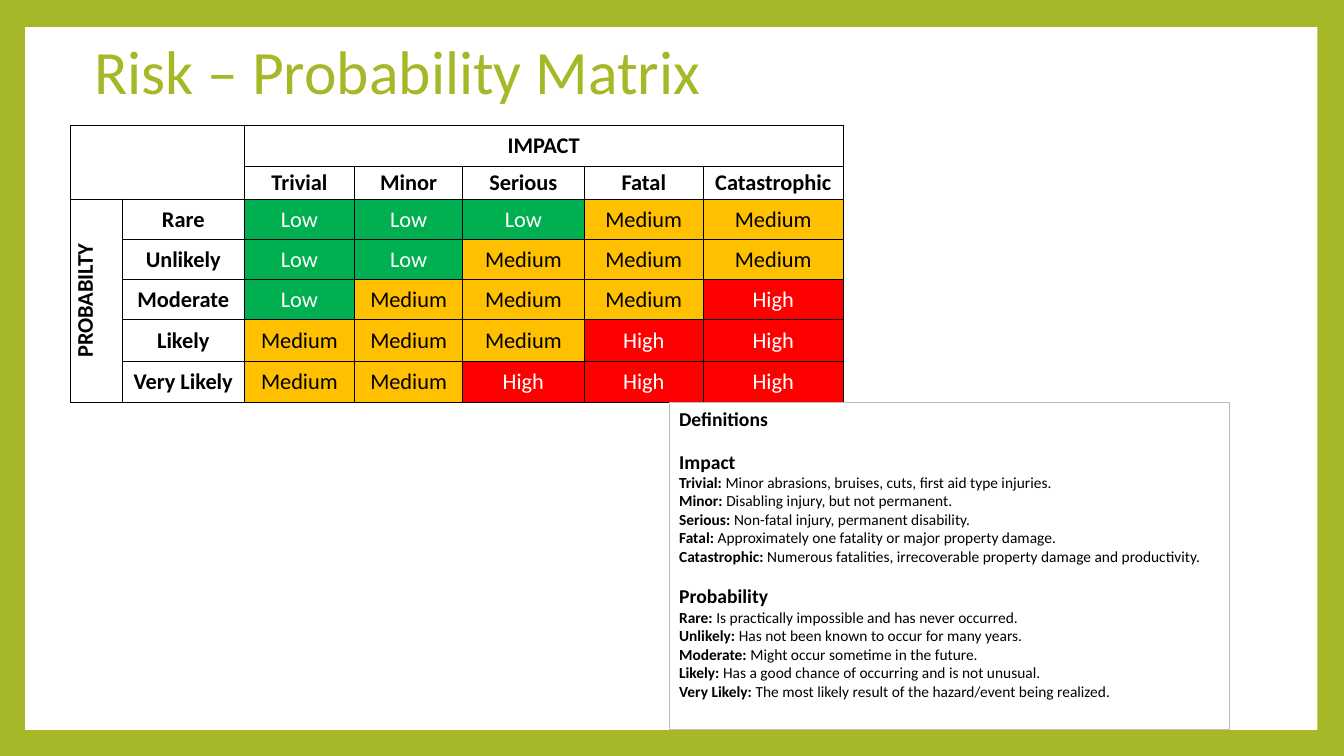
from dataclasses import dataclass

from lxml.etree import SubElement
from pptx import Presentation
from pptx.dml.color import RGBColor
from pptx.enum.shapes import MSO_SHAPE
from pptx.enum.text import MSO_ANCHOR, MSO_AUTO_SIZE, PP_ALIGN
from pptx.oxml.ns import qn
from pptx.shapes.autoshape import Shape
from pptx.slide import Slide
from pptx.table import _Cell
from pptx.text.text import _Paragraph
from pptx.util import Pt

FONT = "Calibri"
LIME = RGBColor(0xA6, 0xB7, 0x27)
WHITE = RGBColor(0xFF, 0xFF, 0xFF)
BLACK = RGBColor(0x00, 0x00, 0x00)
GRAY = RGBColor(0xBD, 0xBD, 0xBD)
GREEN = RGBColor(0x00, 0xB0, 0x50)
AMBER = RGBColor(0xFF, 0xC0, 0x00)
RED = RGBColor(0xFF, 0x00, 0x00)


@dataclass(frozen=True)
class Level:
    name: str
    fill: RGBColor
    color: RGBColor


@dataclass(frozen=True)
class Scale:
    heading: str
    meanings: dict[str, str]


LOW = Level("Low", GREEN, WHITE)
MEDIUM = Level("Medium", AMBER, BLACK)
HIGH = Level("High", RED, WHITE)

IMPACT = Scale("Impact", {
    "Trivial": "Minor abrasions, bruises, cuts, first aid type injuries.",
    "Minor": "Disabling injury, but not permanent.",
    "Serious": "Non-fatal injury, permanent disability.",
    "Fatal": "Approximately one fatality or major property damage.",
    "Catastrophic": "Numerous fatalities, irrecoverable property damage and productivity.",
})
PROBABILITY = Scale("Probability", {
    "Rare": "Is practically impossible and has never occurred.",
    "Unlikely": "Has not been known to occur for many years.",
    "Moderate": "Might occur sometime in the future.",
    "Likely": "Has a good chance of occurring and is not unusual.",
    "Very Likely": "The most likely result of the hazard/event being realized.",
})

COLUMN_WIDTHS = [37, 87, 79, 77, 87, 85, 100]
ROW_HEIGHTS = [29.3, 23.7, 28.6, 28.6, 28.6, 29.9, 29.3]


def risk_level(likelihood: int, severity: int) -> Level:
    """Rate a risk by the sum of its two zero-based ranks."""
    score = likelihood + severity
    if score <= 2:
        return LOW
    return MEDIUM if score <= 5 else HIGH


def set_font(p: _Paragraph, size: float, color: RGBColor, bold: bool = False) -> None:
    p.font.name = FONT
    p.font.size = Pt(size)
    p.font.color.rgb = color
    p.font.bold = bold


def add_panel(s: Slide, left: float, top: float, width: float, height: float) -> Shape:
    sp = s.shapes.add_shape(MSO_SHAPE.RECTANGLE, Pt(left), Pt(top), Pt(width), Pt(height))
    sp.shadow.inherit = False
    sp.fill.solid()
    sp.fill.fore_color.rgb = WHITE
    sp.line.fill.background()
    return sp


def add_title(s: Slide) -> None:
    title = s.shapes.title
    title.left, title.top, title.width, title.height = Pt(60), Pt(0), Pt(778), Pt(106.5)
    tf = title.text_frame
    tf.text = "Risk – Probability Matrix"
    tf.auto_size = MSO_AUTO_SIZE.NONE
    tf.vertical_anchor = MSO_ANCHOR.MIDDLE
    p = tf.paragraphs[0]
    p.alignment = PP_ALIGN.LEFT
    p.line_spacing = 0.9
    set_font(p, 44, LIME)


def add_borders(cell: _Cell) -> None:
    tc_pr = cell._tc.get_or_add_tcPr()
    for side in ("a:lnL", "a:lnR", "a:lnT", "a:lnB"):
        ln = SubElement(tc_pr, qn(side), w=str(Pt(0.5)))
        SubElement(SubElement(ln, qn("a:solidFill")), qn("a:srgbClr"), val=str(BLACK))


def fill_cell(cell: _Cell, text: str, level: Level | None = None) -> None:
    """Write a rating when a level is given, else a bold heading."""
    cell.text = text
    cell.vertical_anchor = MSO_ANCHOR.MIDDLE
    cell.margin_left = cell.margin_right = cell.margin_top = Pt(0.7)
    cell.margin_bottom = Pt(0)
    p = cell.text_frame.paragraphs[0]
    p.alignment = PP_ALIGN.CENTER
    set_font(p, 16, level.color if level else BLACK, bold=level is None)
    add_borders(cell)
    if level:
        cell.fill.solid()
        cell.fill.fore_color.rgb = level.fill
    else:
        cell.fill.background()


def add_matrix(s: Slide) -> None:
    rows, cols = len(ROW_HEIGHTS), len(COLUMN_WIDTHS)
    table = s.shapes.add_table(rows, cols, Pt(50.4), Pt(89.3),
                               Pt(sum(COLUMN_WIDTHS)), Pt(sum(ROW_HEIGHTS))).table
    table.first_row = table.horz_banding = False
    for column, width in zip(table.columns, COLUMN_WIDTHS):
        column.width = Pt(width)
    for row, height in zip(table.rows, ROW_HEIGHTS):
        row.height = Pt(height)

    headings = {(0, 2): "IMPACT", (2, 0): "PROBABILTY"}
    headings |= {(1, c): name for c, name in enumerate(IMPACT.meanings, 2)}
    headings |= {(r, 1): name for r, name in enumerate(PROBABILITY.meanings, 2)}
    for r in range(rows):
        for c in range(cols):
            if r >= 2 and c >= 2:
                level = risk_level(r - 2, c - 2)
                fill_cell(table.cell(r, c), level.name, level)
            else:
                fill_cell(table.cell(r, c), headings.get((r, c), ""))

    table.cell(0, 0).merge(table.cell(1, 1))
    table.cell(0, 2).merge(table.cell(0, cols - 1))
    table.cell(2, 0).merge(table.cell(rows - 1, 0))
    table.cell(2, 0)._tc.get_or_add_tcPr().set("vert", "vert270")


def add_definitions(s: Slide) -> None:
    sp = add_panel(s, 478, 287.3, 400, 233.5)
    sp.line.color.rgb = GRAY
    sp.line.width = Pt(0.75)
    tf = sp.text_frame
    tf.word_wrap = True
    tf.vertical_anchor = MSO_ANCHOR.TOP
    p = tf.paragraphs[0]
    p.text = "Definitions"
    p.alignment = PP_ALIGN.LEFT
    set_font(p, 14, BLACK, bold=True)
    for scale in (IMPACT, PROBABILITY):
        p = tf.add_paragraph()
        p.text = scale.heading
        p.alignment = PP_ALIGN.LEFT
        p.space_before = Pt(13.4)
        set_font(p, 14, BLACK, bold=True)
        for term, meaning in scale.meanings.items():
            p = tf.add_paragraph()
            p.alignment = PP_ALIGN.LEFT
            set_font(p, 11, BLACK)
            r = p.add_run()
            r.text = f"{term}: "
            r.font.bold = True
            p.add_run().text = meaning


def main() -> None:
    prs = Presentation()
    prs.slide_width, prs.slide_height = Pt(960), Pt(540)
    s = prs.slides.add_slide(prs.slide_layouts[5])
    s.background.fill.solid()
    s.background.fill.fore_color.rgb = LIME
    frame = add_panel(s, 18, 19.4, 923, 502)
    s.shapes.title._element.addprevious(frame._element)
    add_title(s)
    add_matrix(s)
    add_definitions(s)
    prs.save("out.pptx")


if __name__ == "__main__":
    main()
